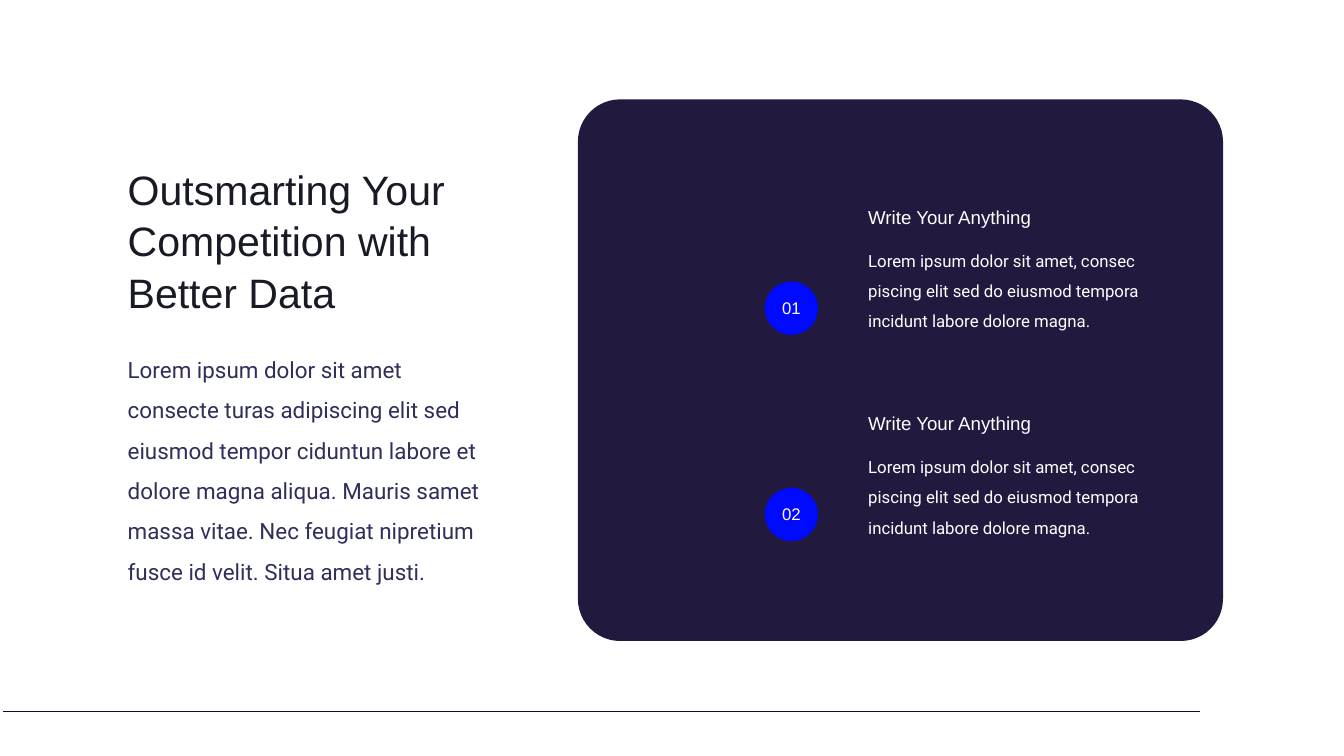
import dataclasses
import pptx
import pptx.dml.color
import pptx.enum.shapes
import pptx.enum.text
import pptx.oxml
import pptx.oxml.ns
import pptx.util
import lxml.etree

Pt = pptx.util.Pt
Align = pptx.enum.text.PP_ALIGN
Shape = pptx.enum.shapes.MSO_SHAPE


@dataclasses.dataclass(frozen=True)
class Theme:
    title_font: str = "Arial"
    body_font: str = "Roboto"
    title_color: str = "181A26"
    body_color: str = "2F2F5B"
    panel: str = "22193F"
    badge: str = "000AFF"
    light: str = "FFFFFF"
    rule: str = "060D39"
    title_size: int = 44
    body_size: int = 24
    heading_size: int = 20
    small_size: int = 18


THEME = Theme()


def rgb(value):
    return pptx.dml.color.RGBColor.from_string(value)


def apply(target, values):
    for name, value in values.items():
        setattr(target, name, value)


def place(item, left, top, width, height):
    apply(item, {"left": Pt(left), "top": Pt(top), "width": Pt(width), "height": Pt(height)})


def write(item, text, font, size, color, spacing=1.0, align=Align.LEFT):
    frame = item.text_frame
    frame.text = text
    apply(frame, {
        "word_wrap": True,
        "auto_size": pptx.enum.text.MSO_AUTO_SIZE.NONE,
        "vertical_anchor": pptx.enum.text.MSO_ANCHOR.TOP,
    })
    para = frame.paragraphs[0]
    apply(para, {"alignment": align, "line_spacing": spacing, "space_before": Pt(0)})
    span = para.runs[0]
    apply(span.font, {"name": font, "size": Pt(size)})
    span.font.color.rgb = rgb(color)
    return para


def add_text(page, box, *args, **options):
    item = page.shapes.add_textbox(*map(Pt, box))
    write(item, *args, **options)


def add_filled(page, kind, box, color):
    item = page.shapes.add_shape(kind, *map(Pt, box))
    item.shadow.inherit = False
    item.fill.solid()
    item.fill.fore_color.rgb = rgb(color)
    item.line.fill.background()
    return item


def add_intro(page, left, top):
    title = page.shapes.title
    place(title, left, top, 394, 167)
    write(title, "Outsmarting Your Competition with Better Data",
          THEME.title_font, THEME.title_size, THEME.title_color, spacing=1.04)

    body = page.placeholders[1]
    place(body, left, top + 193, 406, 265)
    para = write(
        body,
        "Lorem ipsum dolor sit amet consecte turas adipiscing elit sed eiusmod tempor "
        "ciduntun labore et dolore magna aliqua. Mauris samet massa vitae. "
        "Nec feugiat nipretium fusce id velit. Situa amet justi.",
        THEME.body_font, THEME.body_size, THEME.body_color, spacing=1.5)
    properties = para._p.get_or_add_pPr()
    properties.set("marL", "0")
    properties.set("indent", "0")
    lxml.etree.SubElement(properties, pptx.oxml.ns.qn("a:buNone"))


def add_point(page, left, top, number, heading, detail):
    add_filled(page, Shape.OVAL, (left, top + 85, 57, 57), THEME.badge)
    add_text(page, (left, top + 98.6, 57, 29), number,
             THEME.title_font, THEME.small_size, THEME.light, align=Align.CENTER)
    add_text(page, (left + 103.7, top, 322, 32), heading,
             THEME.title_font, THEME.heading_size, THEME.light)
    add_text(page, (left + 103.7, top + 37.4, 322, 101.5), detail,
             THEME.body_font, THEME.small_size, THEME.light, spacing=1.5)


def add_panel(page, left, top, width, height):
    panel = add_filled(page, Shape.ROUNDED_RECTANGLE, (left, top, width, height), THEME.panel)
    panel.adjustments[0] = 0.078
    for index in range(2):
        add_point(page, left + 200.2, top + 110.2 + 221 * index, f"{index + 1:02}",
                  "Write Your Anything",
                  "Lorem ipsum dolor sit amet, consec piscing elit sed do eiusmod "
                  "tempora incidunt labore dolore magna.")


def add_rule(page, left, top, width):
    rule = page.shapes.add_connector(
        pptx.enum.shapes.MSO_CONNECTOR.STRAIGHT,
        Pt(left), Pt(top), Pt(left + width), Pt(top))
    rule.line.color.rgb = rgb(THEME.rule)
    rule.line.width = Pt(0.5)
    lxml.etree.SubElement(rule._element.spPr, pptx.oxml.ns.qn("a:effectLst"))


def main():
    deck = pptx.Presentation()
    apply(deck, {"slide_width": Pt(1440), "slide_height": Pt(810)})
    page = deck.slides.add_slide(deck.slide_layouts[1])
    add_rule(page, 3, 762.5, 1283)
    add_intro(page, 129.6, 170.6)
    add_panel(page, 619.2, 106.5, 691.2, 580.3)
    deck.save("out.pptx")


if __name__ == "__main__":
    main()
